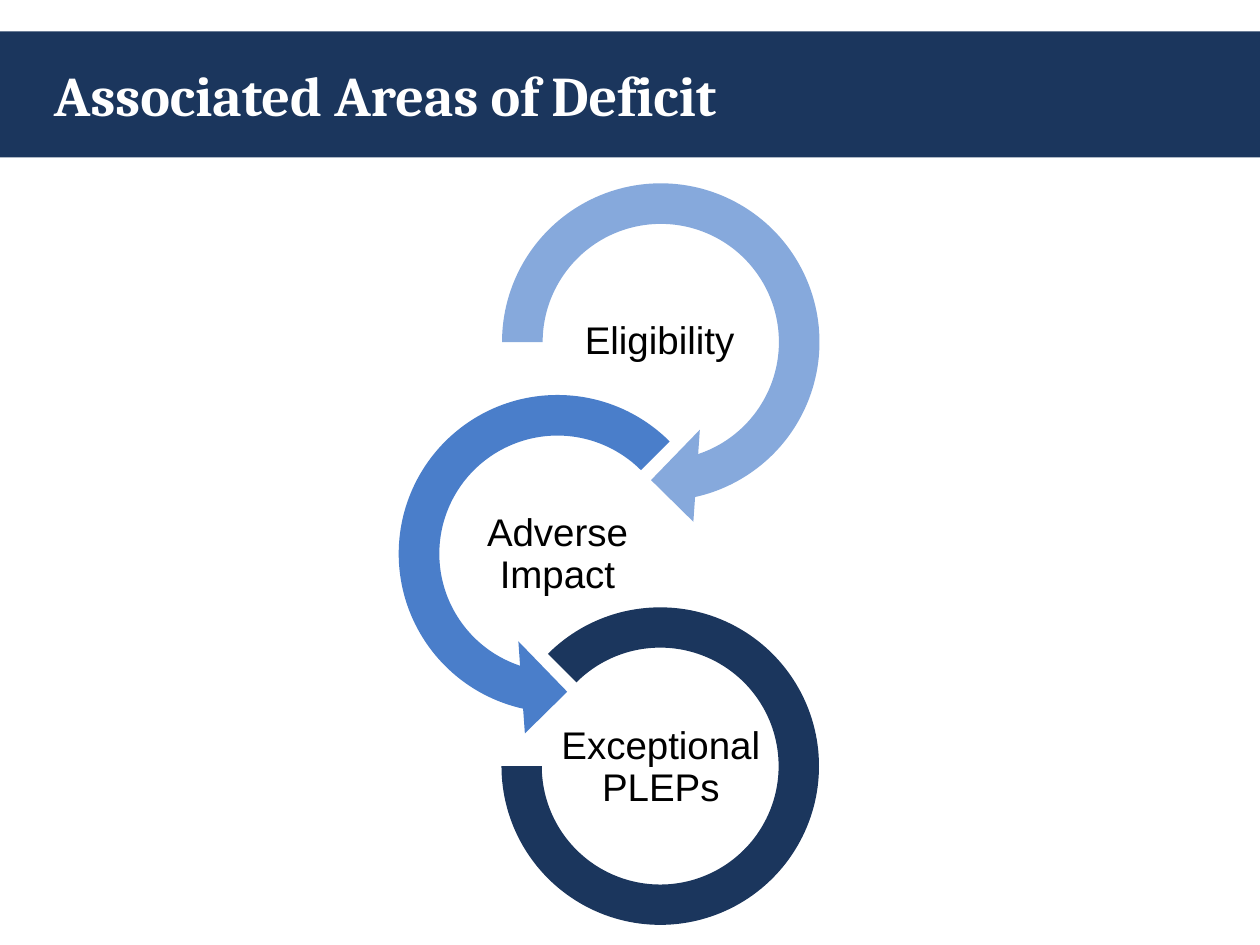
from pptx import Presentation
from pptx.dml.color import RGBColor
from pptx.enum.shapes import MSO_SHAPE as SHAPE
from pptx.enum.text import MSO_ANCHOR as ANCHOR, PP_ALIGN as ALIGN
from pptx.util import Inches, Pt

NAVY = "1B365D"
STEPS = [
    ("Eligibility", SHAPE.CIRCULAR_ARROW, "86A9DC",
     (3.78, 1.25, 2.93), (4.42, 2.31), (0.11, 11.423, 45, 108, 0.125)),
    ("Adverse Impact", SHAPE.LEFT_CIRCULAR_ARROW, "4A7ECA",
     (2.96, 2.93, 2.93), (3.61, 4), (0.11, 11.423, 63, 189, 0.125)),
    ("Exceptional PLEPs", SHAPE.BLOCK_ARC, NAVY,
     (3.98, 4.82, 2.52), (4.43, 5.69), (135, 108, 0.127)),
]


def rgb(color):
    return RGBColor.from_string(color)


def add_filled(s, kind, x, y, w, h, color):
    sp = s.shapes.add_shape(kind, Inches(x), Inches(y), Inches(w), Inches(h))
    sp.shadow.inherit = False
    sp.fill.solid()
    sp.fill.fore_color.rgb = rgb(color)
    sp.line.fill.background()
    return sp


def add_text(s, text, x, y, w, h, font, size, color):
    sp = s.shapes.add_textbox(Inches(x), Inches(y), Inches(w), Inches(h))
    tf = sp.text_frame
    tf.word_wrap = True
    tf.vertical_anchor = ANCHOR.MIDDLE
    p = tf.paragraphs[0]
    p.text = text
    p.font.name = font
    p.font.size = Pt(size)
    p.font.color.rgb = rgb(color)
    return tf


def add_banner(s, x, y, w, h):
    add_filled(s, SHAPE.RECTANGLE, x, y, w, h, NAVY)
    tf = add_text(s, "Associated Areas of Deficit", x + 0.33, y, 9.08, h,
                  "Cambria", 32, "FFFFFF")
    tf.paragraphs[0].font.bold = True


def add_step(s, label, kind, color, ring, label_at, adjustments):
    x, y, size = ring
    sp = add_filled(s, kind, x, y, size, size, color)
    for i, value in enumerate(adjustments):
        sp.adjustments[i] = value
    tf = add_text(s, label, *label_at, 1.63, 0.81, "Arial", 22, "000000")
    tf.margin_left = tf.margin_right = Inches(0.02)
    tf.margin_top = tf.margin_bottom = Inches(0.02)
    p = tf.paragraphs[0]
    p.alignment = ALIGN.CENTER
    p.line_spacing = 0.9


def main():
    prs = Presentation()
    prs.slide_width, prs.slide_height = Inches(10), Inches(7.5)
    s = prs.slides.add_slide(prs.slide_layouts[6])
    add_banner(s, 0, 0.25, 10, 1)
    for step in STEPS:
        add_step(s, *step)
    prs.save("out.pptx")


if __name__ == "__main__":
    main()
